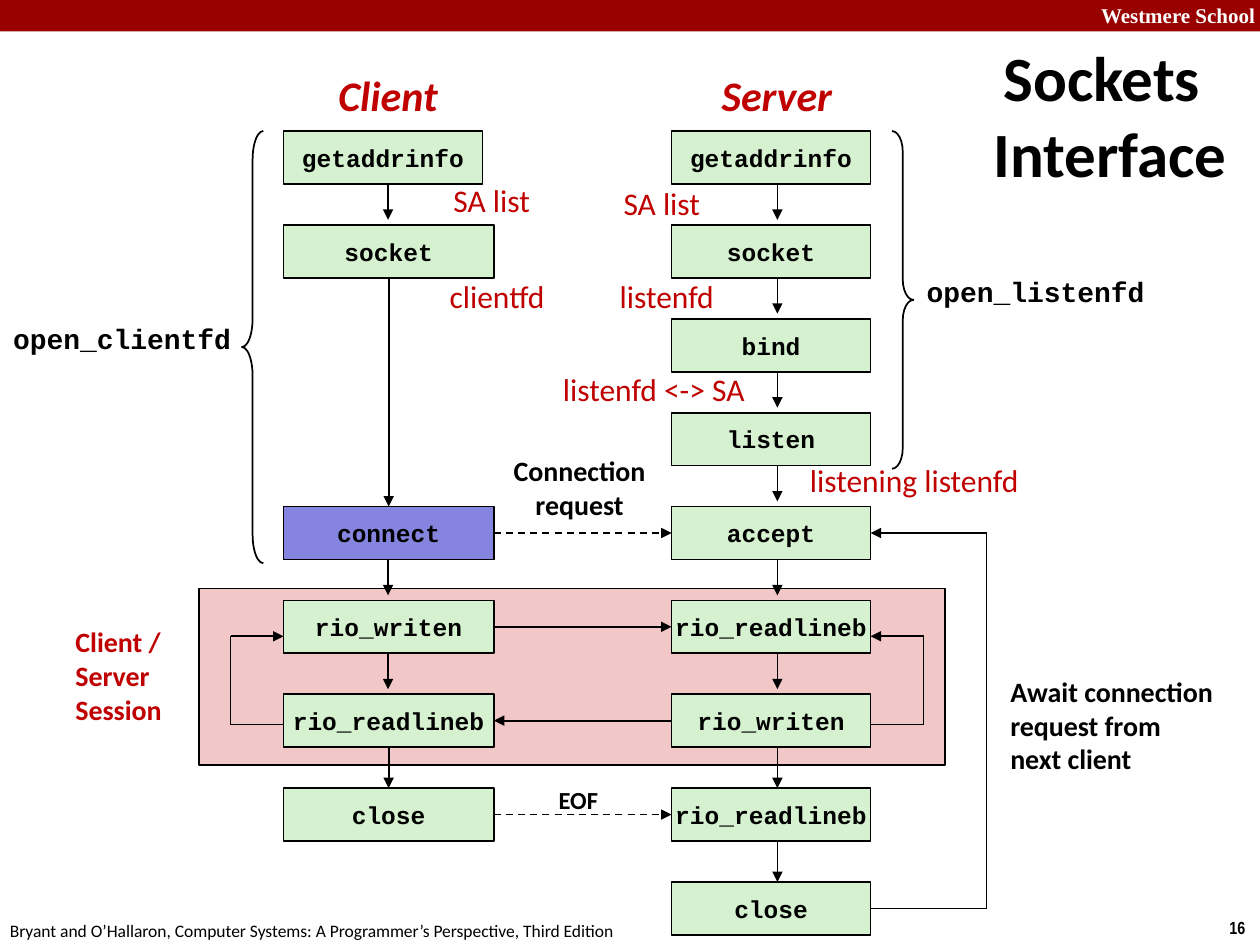
from dataclasses import dataclass
from typing import Any, Optional

from lxml import etree
from pptx import Presentation
from pptx.dml.color import RGBColor
from pptx.enum.dml import MSO_LINE
from pptx.enum.shapes import MSO_CONNECTOR, MSO_SHAPE
from pptx.enum.text import MSO_ANCHOR, PP_ALIGN
from pptx.oxml.ns import qn
from pptx.util import Inches, Pt

STRAIGHT = MSO_CONNECTOR.STRAIGHT
RECTANGLE = MSO_SHAPE.RECTANGLE
LEFT_BRACE, RIGHT_BRACE = MSO_SHAPE.LEFT_BRACE, MSO_SHAPE.RIGHT_BRACE
DASH = MSO_LINE.DASH
LEFT, CENTER = PP_ALIGN.LEFT, PP_ALIGN.CENTER
TOP, MIDDLE = MSO_ANCHOR.TOP, MSO_ANCHOR.MIDDLE

COLORS = {
    "black": "000000",
    "white": "FFFFFF",
    "banner": "990000",
    "red": "C00000",
    "session": "F1C7C7",
    "call": "D5F1CF",
    "connect": "8585E0",
}

SITE_TOP, SITE_LEFT, SITE_BOTTOM, SITE_RIGHT = range(4)
FIRST_ROW, ROW_STEP, CALL_HEIGHT = 1.04, 0.745, 0.42
CLIENT_LEFT, SERVER_LEFT = 2.25, 5.33
CLIENT_WIDTH, SERVER_WIDTH = 1.67, 1.58
CLIENT_ARROW, SERVER_ARROW = 3.08, 6.17
ARROW_GAP = 0.04


@dataclass(frozen=True)
class Style:
    size: float
    font: str = "Calibri"
    color: str = "black"
    bold: bool = True
    italic: bool = False


@dataclass(frozen=True)
class Label:
    text: str
    left: float
    top: float
    width: float
    height: float
    style: Style
    align: Any = LEFT
    anchor: Any = MIDDLE
    wrap: bool = False
    hanging: float = 0


@dataclass(frozen=True)
class Call:
    name: str
    row: int
    left: float
    width: float
    fill: str = "call"

    @property
    def top(self) -> float:
        return FIRST_ROW + ROW_STEP * self.row


@dataclass(frozen=True)
class End:
    x: float
    y: float
    box: Any = None
    site: Optional[int] = None


CODE = Style(14, "Courier New")
WRAPPER = Style(16, "Courier New")
NOTE = Style(16)
HEADING = Style(24, color="red", italic=True)
RESULT = Style(18, color="red", bold=False)

CLIENT_CALLS = [
    Call("getaddrinfo", 0, CLIENT_LEFT, SERVER_WIDTH),
    Call("socket", 1, CLIENT_LEFT, CLIENT_WIDTH),
    Call("connect", 4, CLIENT_LEFT, CLIENT_WIDTH, "connect"),
    Call("rio_writen", 5, CLIENT_LEFT, CLIENT_WIDTH),
    Call("rio_readlineb", 6, CLIENT_LEFT, CLIENT_WIDTH),
    Call("close", 7, CLIENT_LEFT, CLIENT_WIDTH),
]
SERVER_CALLS = [
    Call(name, row, SERVER_LEFT, SERVER_WIDTH)
    for row, name in enumerate([
        "getaddrinfo", "socket", "bind", "listen", "accept",
        "rio_readlineb", "rio_writen", "rio_readlineb", "close",
    ])
]
LABELS = [
    Label("Westmere School", 8.64, -0.03, 1.43, 0.3,
          Style(12, "Times New Roman", "white"), anchor=TOP),
    Label("16", 9.66, 7.23, 0.34, 0.27, Style(10, "Arial Narrow"), anchor=TOP),
    Label("Bryant and O’Hallaron, Computer Systems: A Programmer’s Perspective, Third Edition",
          -0.02, 7.25, 5.08, 0.27, Style(10, bold=False), anchor=TOP),
    Label("Sockets Interface", 7.58, 0.25, 2.33, 1.31, Style(36), CENTER,
          wrap=True, hanging=0.13),
    Label("Client", 2.58, 0.5, 1, 0.5, HEADING, CENTER),
    Label("Server", 5.62, 0.5, 1.09, 0.5, HEADING, CENTER),
    Label("Client / Server\nSession", 0.5, 4.94, 0.92, 0.84,
          Style(16, color="red"), wrap=True),
    Label("Connection\nrequest", 3.97, 3.55, 1.26, 0.64, NOTE, CENTER),
    Label("EOF", 4.33, 6.18, 0.52, 0.34, Style(14), CENTER),
    Label("Await connection\nrequest from\nnext client", 7.92, 5.3, 1.83, 0.91, NOTE),
    Label("open_listenfd", 7.25, 2.13, 1.94, 0.37, WRAPPER, CENTER),
    Label("open_clientfd", 0, 2.5, 1.94, 0.37, WRAPPER, CENTER),
    Label("listening listenfd", 6.33, 3.61, 1.92, 0.4, RESULT, anchor=TOP),
    Label("SA list", 3.5, 1.39, 0.81, 0.4, RESULT, anchor=TOP),
    Label("SA list", 4.85, 1.41, 0.81, 0.4, RESULT, anchor=TOP),
    Label("clientfd", 3.47, 2.15, 0.99, 0.4, RESULT, anchor=TOP),
    Label("listenfd", 4.82, 2.15, 0.96, 0.4, RESULT, anchor=TOP),
    Label("listenfd <-> SA", 4.37, 2.89, 1.66, 0.4, RESULT, anchor=TOP),
]


def rgb(color: str) -> RGBColor:
    return RGBColor.from_string(COLORS[color])


def write(frame: Any, text: str, style: Style, align: Any, anchor: Any, wrap: bool) -> None:
    frame.word_wrap = wrap
    frame.vertical_anchor = anchor
    for index, line in enumerate(text.split("\n")):
        paragraph = frame.add_paragraph() if index else frame.paragraphs[0]
        paragraph.alignment = align
        run = paragraph.add_run()
        run.text = line
        run.font.name = style.font
        run.font.size = Pt(style.size)
        run.font.bold = style.bold
        run.font.italic = style.italic
        run.font.color.rgb = rgb(style.color)


def add_label(slide: Any, label: Label) -> None:
    frame = slide.shapes.add_textbox(
        Inches(label.left), Inches(label.top), Inches(label.width), Inches(label.height)
    ).text_frame
    write(frame, label.text, label.style, label.align, label.anchor, label.wrap)
    if label.hanging:
        properties = frame.paragraphs[0]._p.get_or_add_pPr()
        properties.set("marL", str(Inches(label.hanging)))
        properties.set("indent", str(-Inches(label.hanging)))


def add_outline(slide: Any, kind: Any, left: float, top: float, width: float, height: float,
                fill: Optional[str] = None, line: Optional[str] = "black") -> Any:
    shape = slide.shapes.add_shape(kind, Inches(left), Inches(top), Inches(width), Inches(height))
    shape.shadow.inherit = False
    if fill:
        shape.fill.solid()
        shape.fill.fore_color.rgb = rgb(fill)
    else:
        shape.fill.background()
    if line:
        shape.line.color.rgb = rgb(line)
        shape.line.width = Pt(1)
    else:
        shape.line.fill.background()
    return shape


def add_call(slide: Any, call: Call) -> Any:
    box = add_outline(slide, RECTANGLE, call.left, call.top, call.width, CALL_HEIGHT, call.fill)
    write(box.text_frame, call.name, CODE, CENTER, MIDDLE, False)
    return box


def side(box: Any, site: int) -> End:
    across = {SITE_LEFT: 0, SITE_RIGHT: 1}.get(site, 0.5)
    down = {SITE_TOP: 0, SITE_BOTTOM: 1}.get(site, 0.5)
    return End((box.left + box.width * across) / Inches(1),
               (box.top + box.height * down) / Inches(1), box, site)


def add_link(slide: Any, start: End, finish: End, arrow: bool = True, dashed: bool = False) -> None:
    link = slide.shapes.add_connector(
        STRAIGHT, Inches(start.x), Inches(start.y), Inches(finish.x), Inches(finish.y))
    if start.box is not None:
        link.begin_connect(start.box, start.site)
    if finish.box is not None:
        link.end_connect(finish.box, finish.site)
    link.line.color.rgb = rgb("black")
    link.line.width = Pt(1)
    if dashed:
        link.line.dash_style = DASH
    if arrow:
        etree.SubElement(link.line._get_or_add_ln(), qn("a:tailEnd"), type="triangle")
    etree.SubElement(link._element.spPr, qn("a:effectLst"))


def add_loop(slide: Any, start: End, turn: float, finish: End) -> None:
    corners = [start, End(turn, start.y), End(turn, finish.y), finish]
    for index in range(3):
        add_link(slide, corners[index], corners[index + 1], arrow=index == 2)


def add_brace(slide: Any, kind: Any, left: float, height: float, curl: float) -> None:
    brace = add_outline(slide, kind, left, FIRST_ROW, 0.17, height)
    brace.adjustments[0] = curl
    brace.adjustments[1] = 0.5


def main() -> None:
    deck = Presentation()
    deck.slide_width, deck.slide_height = Inches(10), Inches(7.5)
    slide = deck.slides.add_slide(deck.slide_layouts[6])

    add_outline(slide, RECTANGLE, 0, 0, 10, 0.25, "banner", None)
    add_outline(slide, RECTANGLE, 1.58, 4.67, 5.92, 1.4, "session")
    client = {call.row: add_call(slide, call) for call in CLIENT_CALLS}
    server = {call.row: add_call(slide, call) for call in SERVER_CALLS}

    for calls, x in ((CLIENT_CALLS, CLIENT_ARROW), (SERVER_CALLS, SERVER_ARROW)):
        for upper, lower in zip(calls, calls[1:]):
            joined = lower.row - upper.row > 1 or upper.row >= 6
            if joined and calls is CLIENT_CALLS:
                add_link(slide, side(client[upper.row], SITE_BOTTOM),
                         side(client[lower.row], SITE_TOP))
            else:
                add_link(slide, End(x, upper.top + CALL_HEIGHT),
                         End(x, lower.top - (0 if joined else ARROW_GAP)))

    for row, dashed in ((4, True), (5, False), (7, True)):
        add_link(slide, side(client[row], SITE_RIGHT), side(server[row], SITE_LEFT), dashed=dashed)
    add_link(slide, side(server[6], SITE_LEFT), side(client[6], SITE_RIGHT))

    for edge, turn in ((CLIENT_LEFT, 1.83), (SERVER_LEFT + SERVER_WIDTH, 7.33)):
        add_loop(slide, End(edge, 5.75), turn, End(edge, 5.05))
    add_loop(slide, side(server[8], SITE_RIGHT), 7.83, side(server[4], SITE_RIGHT))

    add_brace(slide, RIGHT_BRACE, 7.08, 2.68, 0.96)
    add_brace(slide, LEFT_BRACE, 1.92, 3.43, 1.33)
    for label in LABELS:
        add_label(slide, label)
    deck.save("out.pptx")


if __name__ == "__main__":
    main()
